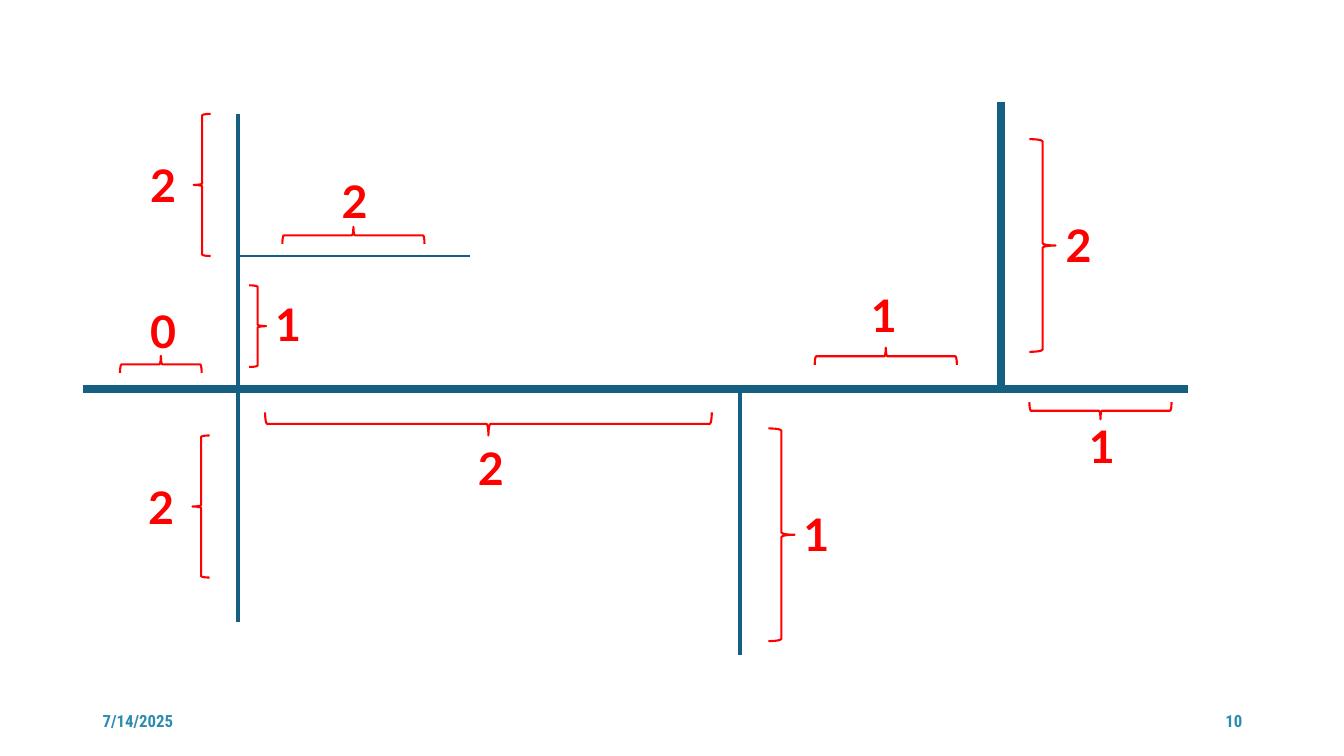
from pptx import Presentation
from pptx.dml.color import RGBColor
from pptx.enum.shapes import MSO_CONNECTOR, MSO_SHAPE
from pptx.enum.text import MSO_ANCHOR, PP_ALIGN
from pptx.oxml.ns import qn
from pptx.util import Inches, Pt
from lxml.etree import SubElement

RED = RGBColor(0xFF, 0x00, 0x00)
NAVY = RGBColor(0x15, 0x60, 0x82)
TEAL = RGBColor(0x2C, 0x8C, 0xB0)

TRUNK_Y, LEFT_X, MIDDLE_X, RIGHT_X, TWIG_Y = 3.86, 2.36, 7.34, 9.93, 2.54

# start x, start y, end x, end y, line width
BRANCHES = [
    (0.82, TRUNK_Y, 11.78, TRUNK_Y, 6),
    (LEFT_X, 1.13, LEFT_X, 6.17, 2.25),
    (RIGHT_X, 1.01, RIGHT_X, TRUNK_Y, 6),
    (LEFT_X, TWIG_Y, 4.66, TWIG_Y, 1.5),
    (MIDDLE_X, TRUNK_Y, MIDDLE_X, 6.5, 3),
]

# brace (left, top, width, height), rotation, order, order's left and top
ORDERS = [
    ((1.92, 1.13, 0.17, 1.41), 0, "2", (1.39, 1.52)),
    ((2.47, 2.83, 0.17, 0.81), 180, "1", (2.63, 2.89)),
    ((1.91, 4.32, 0.17, 1.41), 0, "2", (1.37, 4.71)),
    ((3.42, 1.63, 0.17, 1.41), 90, "2", (3.29, 1.67)),
    ((4.73, 1.99, 0.23, 4.43), 270, "2", (4.64, 4.32)),
    ((7.62, 4.25, 0.26, 2.11), 180, "1", (7.87, 4.98)),
    ((8.7, 2.83, 0.17, 1.41), 90, "1", (8.54, 2.81)),
    ((10.21, 1.38, 0.26, 2.11), 180, "2", (10.47, 2.11)),
    ((10.83, 3.37, 0.17, 1.41), 270, "1", (10.7, 4.1)),
    ((1.51, 3.21, 0.17, 0.81), 90, "0", (1.39, 2.96)),
]
ORDER_SIZE = (0.41, 0.64)
ORDER_FONT = {"name": "Lato", "size": Pt(32), "bold": True}

FOOTERS = [
    ("7/14/2025", 0.92, PP_ALIGN.LEFT),
    ("10", 9.42, PP_ALIGN.RIGHT),
]
FOOTER_FONT = {"name": "Roboto Condensed", "size": Pt(12), "bold": True}


def add_text(page, text, box, font, color, align=PP_ALIGN.LEFT,
             anchor=MSO_ANCHOR.TOP):
    frame = page.shapes.add_textbox(*map(Inches, box)).text_frame
    frame.word_wrap = True
    frame.vertical_anchor = anchor
    para = frame.paragraphs[0]
    para.alignment = align
    span = para.add_run()
    span.text = text
    for name, value in font.items():
        setattr(span.font, name, value)
    span.font.color.rgb = color


def add_branch(page, ends, width):
    branch = page.shapes.add_connector(MSO_CONNECTOR.STRAIGHT, *map(Inches, ends))
    branch.line.color.rgb = NAVY
    branch.line.width = Pt(width)
    SubElement(branch._element.spPr, qn("a:effectLst"))


def add_brace(page, box, rotation):
    brace = page.shapes.add_shape(MSO_SHAPE.LEFT_BRACE, *map(Inches, box))
    brace.rotation = rotation
    brace.shadow.inherit = False
    brace.fill.background()
    brace.line.color.rgb = RED
    brace.line.width = Pt(1.5)


def main():
    deck = Presentation()
    deck.slide_width, deck.slide_height = Inches(13.33), Inches(7.5)
    page = deck.slides.add_slide(deck.slide_layouts.get_by_name("Blank"))

    for text, left, align in FOOTERS:
        add_text(page, text, (left, 6.95, 3, 0.4), FOOTER_FONT, TEAL,
                 align, MSO_ANCHOR.MIDDLE)
    for *ends, width in BRANCHES:
        add_branch(page, ends, width)
    for box, rotation, order, corner in ORDERS:
        add_brace(page, box, rotation)
        add_text(page, order, corner + ORDER_SIZE, ORDER_FONT, RED)

    deck.save("out.pptx")


if __name__ == "__main__":
    main()
